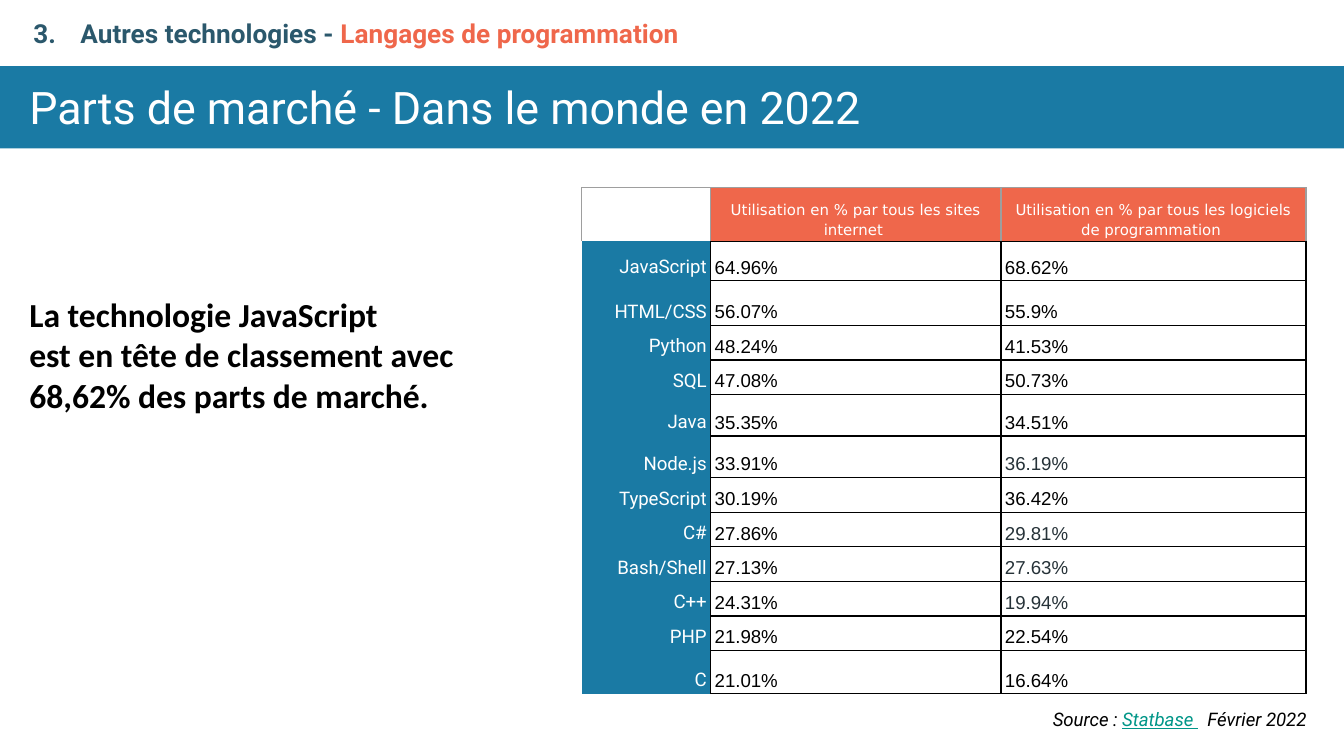
"""Build a slide on the market shares of programming languages."""
from dataclasses import dataclass
from typing import Optional

from lxml import etree
from pptx import Presentation, util as u
from pptx.dml.color import RGBColor
from pptx.enum import shapes, text
from pptx.oxml import ns

W = u.Inches(10)
H = u.Emu(W * 9 // 16)
COLORS = {
    "blue": "1A7AA4", "orange": "EF674B", "navy": "2B586C", "teal": "009688",
    "slate": "263238", "grey": "9E9E9E", "black": "000000", "white": "FFFFFF",
}
ALIGN = text.PP_ALIGN


@dataclass(frozen=True)
class Box:
    """A rectangle in percent of the slide's width and height."""
    x: float
    y: float
    w: float
    h: float

    def emu(self) -> tuple[int, ...]:
        return across(self.x), down(self.y), across(self.w), down(self.h)


@dataclass(frozen=True)
class Style:
    """The look of a paragraph."""
    font: str
    size: int
    color: str
    bold: bool = False
    italic: bool = False
    align: ALIGN = ALIGN.LEFT


@dataclass(frozen=True)
class Span:
    """A piece of text with its own colour or underline."""
    words: str
    color: Optional[str] = None
    underline: bool = False


@dataclass(frozen=True)
class Language:
    """A table row: usage by sites and by software, and its height."""
    name: str
    sites: str
    software: str
    height: float = 4.58
    color: str = "black"


TITLE = Style("Roboto", 24, "white")
SECTION = Style("Roboto", 14, "navy", bold=True)
MESSAGE = Style("Calibri", 18, "black", bold=True)
SOURCE = Style("Roboto", 10, "black", italic=True)
HEADER = Style("DejaVu Sans", 8, "white", align=ALIGN.CENTER)
LABEL = Style("Roboto", 10, "white", align=ALIGN.RIGHT)

BAND = Box(0, 8.75, 100, 10.9)
COLUMNS = (9.6, 21.6, 22.7)
HEADER_HEIGHT = 7.1
HEADERS = (
    "Utilisation en % par tous les sites internet ",
    "Utilisation en % par tous les logiciels de programmation ",
)
LANGUAGES = (
    Language("JavaScript", "64.96%", "68.62%", 5.2),
    Language("HTML/CSS", "56.07%", "55.9%", 5.9),
    Language("Python", "48.24%", "41.53%"),
    Language("SQL", "47.08%", "50.73%"),
    Language("Java", "35.35%", "34.51%", 5.5),
    Language("Node.js", "33.91%", "36.19%", 5.5, "slate"),
    Language("TypeScript", "30.19%", "36.42%"),
    Language("C#", "27.86%", "29.81%", color="slate"),
    Language("Bash/Shell", "27.13%", "27.63%", color="slate"),
    Language("C++", "24.31%", "19.94%", color="slate"),
    Language("PHP", "21.98%", "22.54%"),
    Language("C", "21.01%", "16.64%", 5.7),
)


def across(share: float) -> int:
    return round(W * share / 100)


def down(share: float) -> int:
    return round(H * share / 100)


def rgb(name: str) -> RGBColor:
    return RGBColor.from_string(COLORS[name])


def write(p, style: Style, *spans: Span) -> None:
    p.alignment = style.align
    f = p.font
    f.name, f.size = style.font, u.Pt(style.size)
    f.bold, f.italic = style.bold, style.italic
    f.color.rgb = rgb(style.color)
    for span in spans:
        r = p.add_run()
        r.text = span.words
        if span.color:
            r.font.color.rgb = rgb(span.color)
        if span.underline:
            r.font.underline = True


def add_text(s, box: Box, style: Style, *paragraphs: tuple[Span, ...]):
    tf = s.shapes.add_textbox(*box.emu()).text_frame
    tf.word_wrap = True
    tf.vertical_anchor = text.MSO_ANCHOR.MIDDLE
    tf.margin_left = tf.margin_right = across(1)
    tf.margin_top = tf.margin_bottom = across(1)
    for i, spans in enumerate(paragraphs):
        p = tf.add_paragraph() if i else tf.paragraphs[0]
        write(p, style, *spans)
    return tf


def number(p, start: int, color: str) -> None:
    pr = p._p.get_or_add_pPr()
    pr.set("marL", str(across(5)))
    pr.set("indent", str(across(-3.5)))
    clr = etree.Element(ns.qn("a:buClr"))
    etree.SubElement(clr, ns.qn("a:srgbClr"), val=COLORS[color])
    num = etree.Element(ns.qn("a:buAutoNum"), type="arabicPeriod", startAt=str(start))
    pr.insert(0, clr)
    pr.insert(1, num)


def add_tab(p, share: float) -> None:
    tabs = etree.Element(ns.qn("a:tabLst"))
    etree.SubElement(tabs, ns.qn("a:tab"), pos=str(across(share)), algn="l")
    p._p.get_or_add_pPr().insert(0, tabs)


def set_borders(cell, sides: dict[str, str]) -> None:
    pr = cell._tc.get_or_add_tcPr()
    for i, side in enumerate("LRTB"):
        ln = etree.Element(ns.qn(f"a:ln{side}"), w=str(u.Pt(0.75)))
        if side in sides:
            fill = etree.SubElement(ln, ns.qn("a:solidFill"))
            etree.SubElement(fill, ns.qn("a:srgbClr"), val=COLORS[sides[side]])
        else:
            etree.SubElement(ln, ns.qn("a:noFill"))
        pr.insert(i, ln)


def fill_cell(cell, words: str, style: Style, fill: Optional[str], sides: dict[str, str]) -> None:
    if fill:
        cell.fill.solid()
        cell.fill.fore_color.rgb = rgb(fill)
    else:
        cell.fill.background()
    cell.vertical_anchor = text.MSO_ANCHOR.BOTTOM
    cell.margin_left = cell.margin_right = across(0.3)
    cell.margin_top = cell.margin_bottom = across(0.2)
    p = cell.text_frame.paragraphs[0]
    write(p, style, *([Span(words)] if words else []))
    p.line_spacing = 1.15
    set_borders(cell, sides)


def add_usage_table(s) -> None:
    heights = (HEADER_HEIGHT, *(row.height for row in LANGUAGES))
    box = Box(43.28, 24.85, sum(COLUMNS), sum(heights))
    table = s.shapes.add_table(len(heights), len(COLUMNS), *box.emu()).table
    table.first_row = table.horz_banding = False
    for column, share in zip(table.columns, COLUMNS):
        column.width = across(share)
    for row, share in zip(table.rows, heights):
        row.height = down(share)
    grey = dict.fromkeys("LTR", "grey")
    fill_cell(table.cell(0, 0), "", HEADER, None, grey)
    for j, words in enumerate(HEADERS, 1):
        fill_cell(table.cell(0, j), words, HEADER, "orange", {**grey, "B": "black"})
    grid = dict.fromkeys("LRTB", "black")
    for i, row in enumerate(LANGUAGES, 1):
        fill_cell(table.cell(i, 0), row.name, LABEL, "blue", {"R": "black"})
        fill_cell(table.cell(i, 1), row.sites, Style("Arial", 10, "black"), None, grid)
        fill_cell(table.cell(i, 2), row.software, Style("Arial", 10, row.color), None, grid)


def main() -> None:
    prs = Presentation()
    prs.slide_width, prs.slide_height = W, H
    s = prs.slides.add_slide(prs.slide_layouts[6])
    sp = s.shapes.add_shape(shapes.MSO_SHAPE.RECTANGLE, *BAND.emu())
    sp.shadow.inherit = False
    sp.fill.solid()
    sp.fill.fore_color.rgb = rgb("blue")
    sp.line.fill.background()
    add_text(s, Box(1.2, 8.65, 89.5, BAND.h), TITLE,
             (Span("Parts de marché - Dans le monde en 2022"),))
    add_usage_table(s)
    add_text(s, Box(1.2, 37.2, 38.8, 19.4), MESSAGE,
             (Span("La technologie JavaScript"),),
             (Span("est en tête de classement avec 68,62% des parts de marché."),))
    tf = add_text(s, Box(0, 0.5, 68.8, 7.7), SECTION,
                  (Span("Autres technologies - "), Span("Langages de programmation", "orange")))
    number(tf.paragraphs[0], 3, "navy")
    tf = add_text(s, Box(77.35, 92, 20.85, 6.2), SOURCE,
                  (Span("Source : "), Span("Statbase ", "teal", True), Span("\tFévrier 2022")))
    add_tab(tf.paragraphs[0], 11.5)
    prs.save("out.pptx")


if __name__ == "__main__":
    main()
